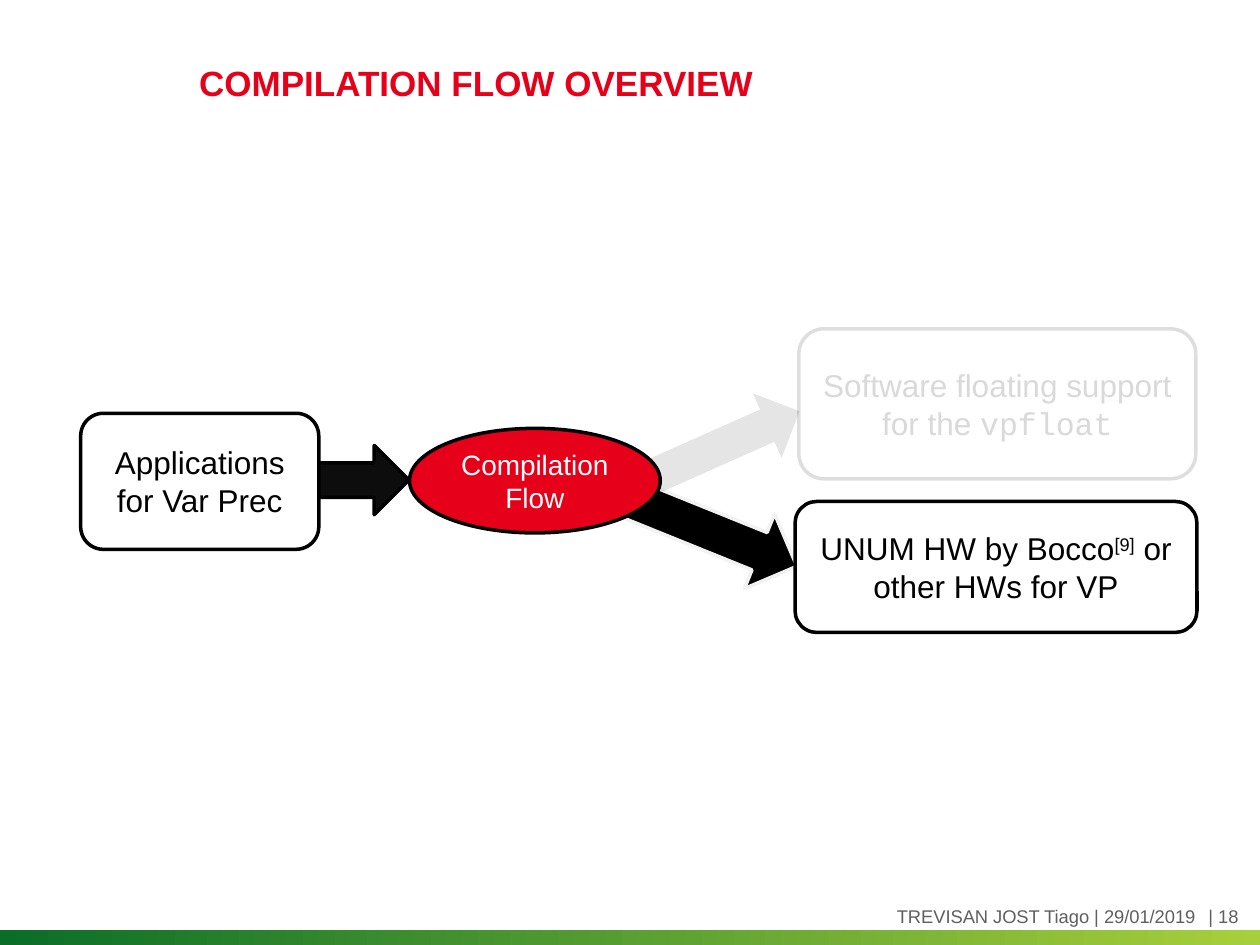
from pptx import Presentation
from pptx.dml.color import RGBColor
from pptx.enum.shapes import MSO_SHAPE
from pptx.enum.text import MSO_ANCHOR, PP_ALIGN
from pptx.oxml.ns import qn
from pptx.util import Inches, Pt
from lxml import etree

ROUND, OVAL = MSO_SHAPE.ROUNDED_RECTANGLE, MSO_SHAPE.OVAL
ARROW, RECT = MSO_SHAPE.DOWN_ARROW, MSO_SHAPE.RECTANGLE
MIDDLE = MSO_ANCHOR.MIDDLE
LEFT, CENTER, RIGHT = PP_ALIGN.LEFT, PP_ALIGN.CENTER, PP_ALIGN.RIGHT
BLACK, WHITE, RED, GREY, PALE = "000000", "FFFFFF", "E60019", "5F5F5F", "D9D9D9"

TITLE = ("COMPILATION FLOW OVERVIEW", (1.58, 0.23, 8.02, 0.85))
FOOTERS = [
    ("TREVISAN JOST Tiago | 29/01/2019", (0, 7.18, 9.49, 0.18), RIGHT),
    ("| 18", (9.59, 7.18, 0.41, 0.18), LEFT),
]
BAND = ((0, 7.38, 10, 0.12), ("0A6E28", "A7CF3B"))
ARROWS = [
    dict(box=(5.3, 3.45, 0.64, 1.52), rotation=292, fill=BLACK, line="F2F2F2"),
    dict(box=(2.61, 3.45, 0.55, 0.72), rotation=270, fill="0D0D0D", line=BLACK),
    dict(box=(5.49, 2.89, 0.56, 1.26), rotation=246, fill=BLACK, fill_alpha=10),
]
NODES = [
    (dict(kind=ROUND, box=(0.64, 3.28, 1.89, 1.08), fill=WHITE, line=BLACK),
     [("Applications for Var Prec", {})], dict(size=18, color=BLACK)),
    (dict(kind=OVAL, box=(3.25, 3.4, 1.99, 0.83), fill=RED, line=BLACK),
     [("Compilation Flow", {})], dict(size=16, color=WHITE)),
    (dict(kind=ROUND, box=(6.34, 2.61, 3.15, 1.19), fill=WHITE, line=BLACK,
          fill_alpha=20, line_alpha=13),
     [("Software floating support for the ", {}), ("vpfloat", dict(font="Courier New"))],
     dict(size=18, color=PALE)),
    (dict(kind=ROUND, box=(6.31, 3.98, 3.19, 1.04), fill=WHITE, line=BLACK),
     [("UNUM HW by Bocco", {}), ("[9]", dict(baseline=30)), (" or other HWs for VP", {})],
     dict(size=18, color=BLACK)),
]


def rgb(value):
    """Turn a hex string into a colour."""
    return RGBColor.from_string(value)


def paint(fill, color, alpha=100):
    """Fill with a solid colour at an opacity in percent."""
    fill.solid()
    fill.fore_color.rgb = rgb(color)
    if alpha < 100:
        clr = next(fill._xPr.iter(qn("a:srgbClr")))
        etree.SubElement(clr, qn("a:alpha")).set("val", str(alpha * 1000))


def add_run(p, text, size=18, color=BLACK, font="Arial", bold=False, baseline=0):
    """Add a formatted run to a paragraph."""
    r = p.add_run()
    r.text = text
    r.font.size, r.font.name, r.font.bold = Pt(size), font, bold
    r.font.color.rgb = rgb(color)
    if baseline:
        r._r.get_or_add_rPr().set("baseline", str(baseline * 1000))


def write(sp, runs, align=CENTER, inset=True, **style):
    """Write runs of text into a shape, centred vertically."""
    tf = sp.text_frame
    tf.word_wrap, tf.vertical_anchor = True, MIDDLE
    if not inset:
        tf.margin_left = tf.margin_right = tf.margin_top = tf.margin_bottom = 0
    p = tf.paragraphs[0]
    p.alignment = align
    for text, extra in runs:
        add_run(p, text, **{**style, **extra})


def add_shape(s, box, kind=ARROW, fill=None, line=None, rotation=0,
              fill_alpha=100, line_alpha=100):
    """Add a preset shape with its fill, outline and rotation."""
    sp = s.shapes.add_shape(kind, *map(Inches, box))
    sp.shadow.inherit = False
    sp.rotation = rotation
    if fill:
        paint(sp.fill, fill, fill_alpha)
    if line:
        sp.line.width = Pt(2)
        paint(sp.line.fill, line, line_alpha)
    else:
        sp.line.fill.background()
    return sp


def main():
    """Build the slide and save it."""
    prs = Presentation()
    prs.slide_width, prs.slide_height = Inches(10), Inches(7.5)
    s = prs.slides.add_slide(prs.slide_layouts[5])

    text, box = TITLE
    title = s.shapes.title
    title.left, title.top, title.width, title.height = map(Inches, box)
    write(title, [(text, {})], LEFT, inset=False, size=20, color=RED, bold=True)

    box, colors = BAND
    band = add_shape(s, box, RECT)
    band.fill.gradient()
    band.fill.gradient_angle = 0
    for stop, color in zip(band.fill.gradient_stops, colors):
        stop.color.rgb = rgb(color)

    for text, box, align in FOOTERS:
        footer = s.shapes.add_textbox(*map(Inches, box))
        write(footer, [(text, {})], align, inset=False, size=10.5, color=GREY)
    for arrow in ARROWS:
        add_shape(s, **arrow)
    for look, runs, style in NODES:
        write(add_shape(s, **look), runs, **style)
    prs.save("out.pptx")


if __name__ == "__main__":
    main()
